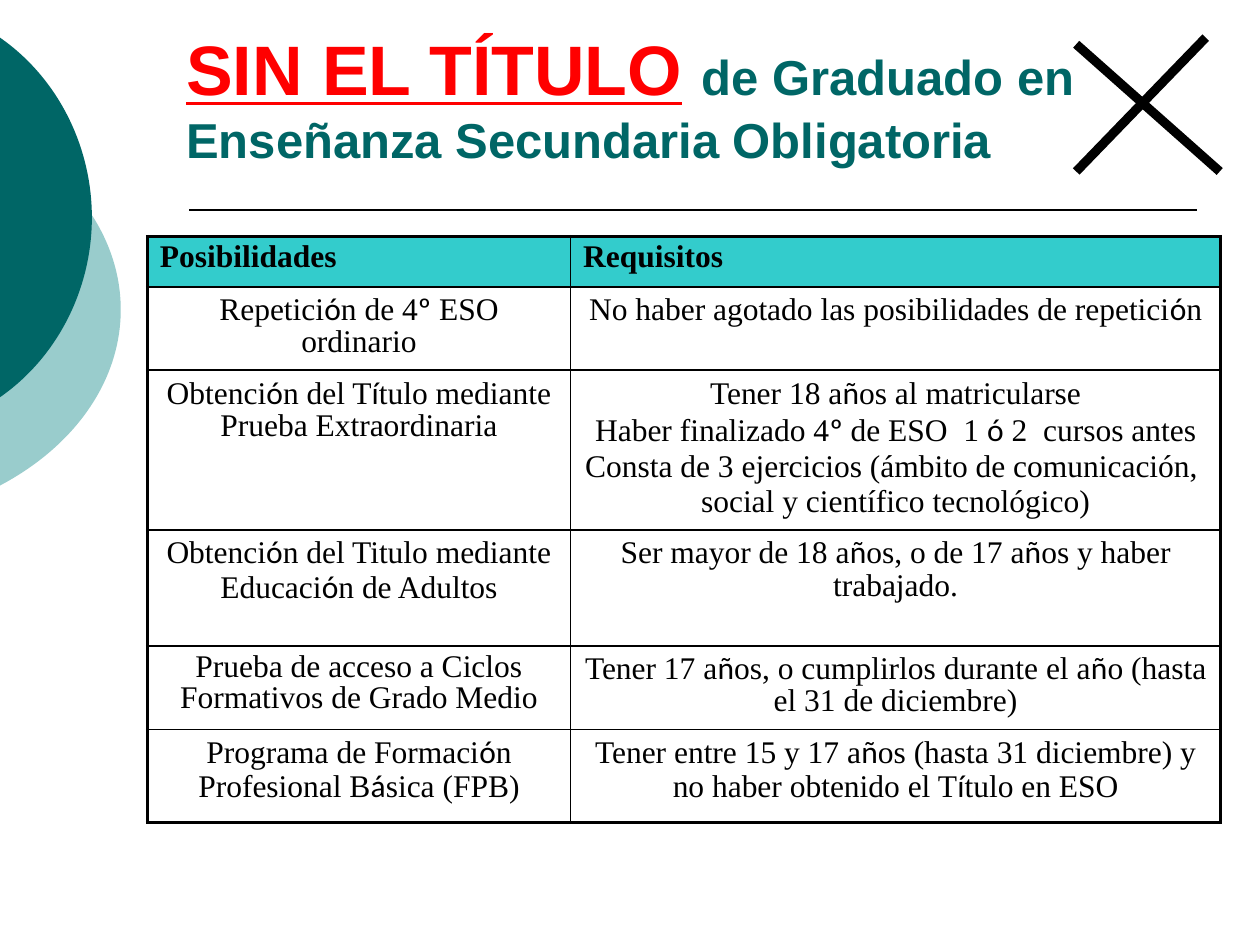
import itertools

import pptx
import pptx.dml.color
import pptx.enum.shapes
import pptx.enum.text
import pptx.oxml
import pptx.oxml.ns
import pptx.util

Pt = pptx.util.Pt
ALIGN = pptx.enum.text.PP_ALIGN
BLACK, TEAL, PALE_TEAL, AQUA, RED = "000000", "006666", "99CCCC", "33CCCC", "FF0000"
ACCENTED = "ºóñíá"
COLUMN_WIDTHS = [241.9, 371.5]
ROW_HEIGHTS = [28.9, 47.5, 91.4, 66.2, 47.7, 53.2]
HEADINGS = ["Posibilidades", "Requisitos"]
OPTIONS = [
    (["Repetición de 4º ESO ordinario"],
     ["No haber agotado las posibilidades de repetición"]),
    (["Obtención del Título mediante Prueba Extraordinaria"],
     ["Tener 18 años al matricularse",
      "Haber finalizado 4º de ESO  1 ó 2  cursos antes",
      "Consta de 3 ejercicios (ámbito de comunicación, \nsocial y científico tecnológico)"]),
    (["Obtención del Titulo mediante Educación de Adultos"],
     ["Ser mayor de 18 años, o de 17 años y haber trabajado."]),
    (["Prueba de acceso a Ciclos Formativos de Grado Medio"],
     ["Tener 17 años, o cumplirlos durante el año (hasta el 31 de diciembre)"]),
    (["Programa de Formación Profesional Básica (FPB)"],
     ["Tener entre 15 y 17 años (hasta 31 diciembre) y no haber obtenido el Título en ESO"]),
]


def rgb(value):
    """Turn a hex string into a colour."""
    return pptx.dml.color.RGBColor.from_string(value)


def add_run(paragraph, text, font, size, colour, bold=False, underline=False):
    """Append one formatted run."""
    run = paragraph.add_run()
    run.text = text
    run.font.name = font
    run.font.size = Pt(size)
    run.font.color.rgb = rgb(colour)
    run.font.bold = bold
    run.font.underline = underline


def add_line(slide, start, end, width):
    """Draw a straight black line between two points."""
    line = slide.shapes.add_connector(
        pptx.enum.shapes.MSO_CONNECTOR.STRAIGHT, *map(Pt, start + end))
    line.line.color.rgb = rgb(BLACK)
    line.line.width = Pt(width)
    line._element.spPr.append(pptx.oxml.parse_xml(
        f"<a:effectLst {pptx.oxml.ns.nsdecls('a')}/>"))


def add_disc_edge(slide, box, edge_top, shoulder, flank, colour):
    """Draw the curved part of a disc box that shows right of the slide's left edge."""
    left, top, width, height = box
    right, bottom = left + width, top + height
    units = 100
    builder = slide.shapes.build_freeform(left * units, top * units, scale=Pt(1) / units)
    builder.add_line_segments([(x * units, y * units) for x, y in (
        (right, top), (right, bottom), (left, bottom))], close=True)
    disc = builder.convert_to_shape()
    upper = [(0, edge_top), shoulder, flank, (right, top + height / 2)]
    lower = [(x, top + bottom - y) for x, y in reversed(upper)]

    def points(corners):
        """Write points in the units of the outline."""
        return "".join(f'<a:pt x="{round((x - left) * units)}" y="{round((y - top) * units)}"/>'
                       for x, y in corners)

    outline = disc._element.spPr.find(".//" + pptx.oxml.ns.qn("a:path"))
    for step in list(outline):
        outline.remove(step)
    for tag, corners in (("moveTo", upper[:1]), ("cubicBezTo", upper[1:]),
                         ("cubicBezTo", lower[1:]), ("close", [])):
        outline.append(pptx.oxml.parse_xml(
            f"<a:{tag} {pptx.oxml.ns.nsdecls('a')}>{points(corners)}</a:{tag}>"))
    disc.shadow.inherit = False
    disc.fill.solid()
    disc.fill.fore_color.rgb = rgb(colour)
    disc.line.fill.background()


def add_title(slide, box):
    """Place and format the title."""
    title = slide.shapes.title
    title.left, title.top, title.width, title.height = map(Pt, box)
    frame = title.text_frame
    frame.word_wrap = True
    frame.auto_size = pptx.enum.text.MSO_AUTO_SIZE.NONE
    frame.vertical_anchor = pptx.enum.text.MSO_ANCHOR.BOTTOM
    paragraph = frame.paragraphs[0]
    paragraph.alignment = ALIGN.LEFT
    add_run(paragraph, "SIN EL TÍTULO", "Arial", 40, RED, True, True)
    add_run(paragraph, " ", "Arial", 40, TEAL, True)
    add_run(paragraph, "de Graduado en", "Arial", 28, TEAL, True)
    paragraph.add_line_break()
    add_run(paragraph, "Enseñanza Secundaria Obligatoria", "Arial", 28, TEAL, True)


def add_cross(slide, box):
    """Draw the two strokes of the cross."""
    left, top, width, height = box
    add_line(slide, (left + width - 8, top), (left, top + height), 5.25)
    add_line(slide, (left + width, top + height), (left, top + 3.8), 5.25)


def set_borders(cell, widths):
    """Give a cell black borders, left, right, top and bottom."""
    properties = cell._tc.get_or_add_tcPr()
    for side, width in zip("LRTB", widths):
        properties.append(pptx.oxml.parse_xml(
            f'<a:ln{side} {pptx.oxml.ns.nsdecls("a")} w="{Pt(width)}">'
            f'<a:solidFill><a:srgbClr val="{BLACK}"/></a:solidFill></a:ln{side}>'))


def write_cell(cell, paragraphs, heading):
    """Write cell paragraphs, with accented letters in their own font."""
    for index, text in enumerate(paragraphs):
        frame = cell.text_frame
        paragraph = frame.add_paragraph() if index else frame.paragraphs[0]
        paragraph.alignment = ALIGN.LEFT if heading else ALIGN.CENTER
        paragraph.line_spacing = 1.0 if index else 0.9
        single_font = "\n" in text
        for number, line in enumerate(text.split("\n")):
            if number:
                paragraph.add_line_break()
            for accented, letters in itertools.groupby(
                    line, lambda letter: letter in ACCENTED and not single_font):
                font = "Calibri" if accented else "Times New Roman"
                add_run(paragraph, "".join(letters), font, 18, BLACK, heading)


def add_options_table(slide, left, top):
    """Build the table of possibilities and requirements."""
    rows = [[[heading] for heading in HEADINGS]] + OPTIONS
    table = slide.shapes.add_table(
        len(rows), len(HEADINGS), Pt(left), Pt(top),
        Pt(sum(COLUMN_WIDTHS)), Pt(sum(ROW_HEIGHTS))).table
    table.first_row = table.horz_banding = False
    for column, width in zip(table.columns, COLUMN_WIDTHS):
        column.width = Pt(width)
    for r, (row, height) in enumerate(zip(rows, ROW_HEIGHTS)):
        table.rows[r].height = Pt(height)
        for c, paragraphs in enumerate(row):
            cell = table.cell(r, c)
            cell.margin_left = cell.margin_right = Pt(7.2)
            cell.margin_top = cell.margin_bottom = Pt(3.6)
            outer = (c == 0, c == len(row) - 1, r == 0, r == len(rows) - 1)
            set_borders(cell, [2 if edge else 1 for edge in outer])
            if r == 0:
                cell.fill.solid()
                cell.fill.fore_color.rgb = rgb(AQUA)
            else:
                cell.fill.background()
            write_cell(cell, paragraphs, heading=r == 0)


def main():
    """Build and save the slide."""
    deck = pptx.Presentation()
    deck.slide_width, deck.slide_height = Pt(720), Pt(540)
    slide = deck.slides.add_slide(deck.slide_layouts[5])
    add_disc_edge(slide, (-255, 54, 324, 246), 76.5, (43.5, 99.5), (69, 137), PALE_TEAL)
    add_disc_edge(slide, (-191, 0, 243.5, 248.5), 21.5, (33, 44.5), (52.5, 83.5), TEAL)
    add_line(slide, (108, 120), (684, 120), 1)
    add_title(slide, (99.3, 43, 576, 57))
    add_cross(slide, (615, 21.5, 82, 76.5))
    add_options_table(slide, 84.2, 135.1)
    deck.save("out.pptx")


if __name__ == "__main__":
    main()
